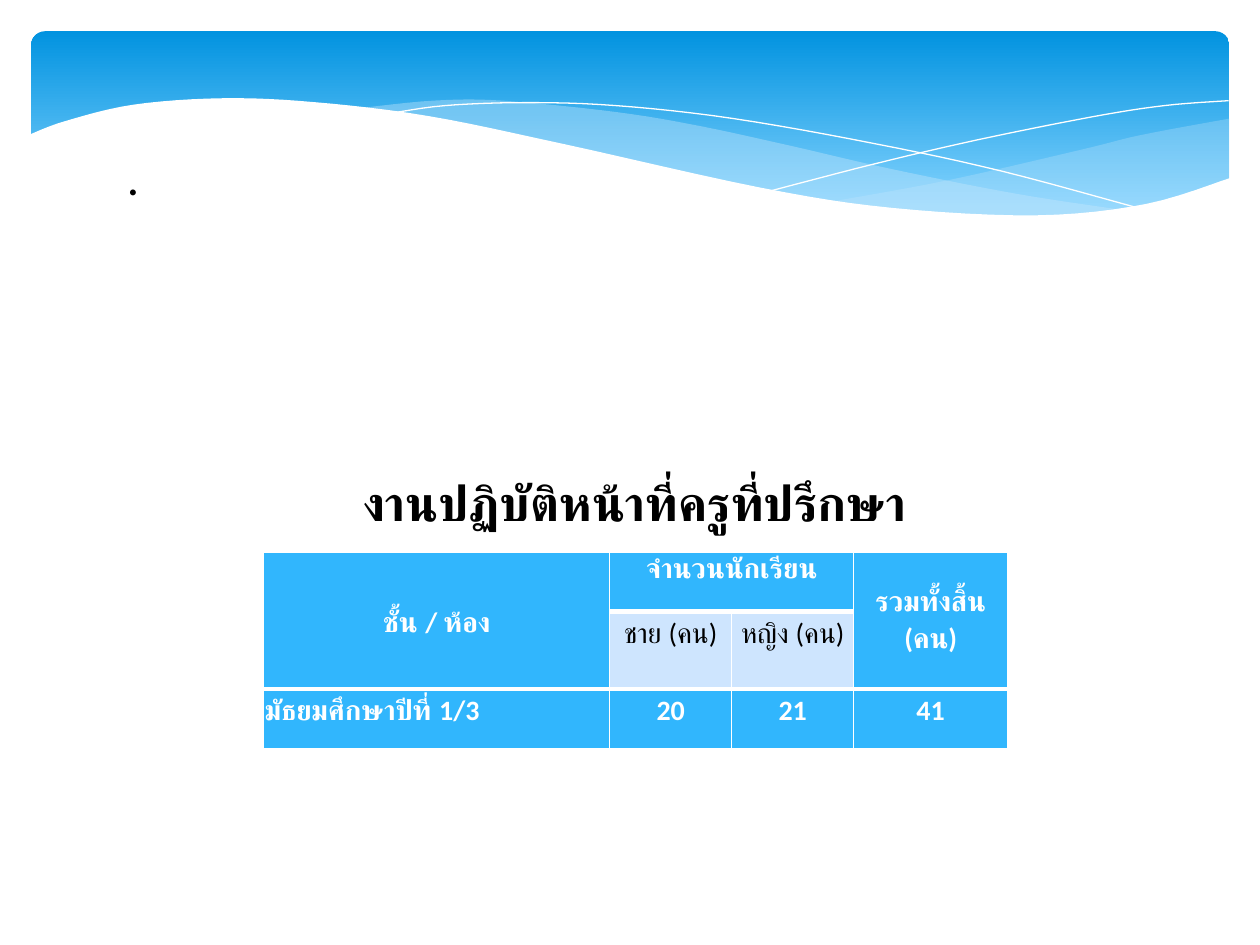
from lxml import etree
from pptx import Presentation
from pptx import util as u
from pptx.dml.color import RGBColor
from pptx.enum import shapes, text
from pptx.oxml.ns import qn

THEME = {
    "font": "Calibri", "title_font": "Arial",
    "white": "FFFFFF", "black": "000000", "veil": "C6E7FC",
    "sky": "0293E0", "sky_light": "83D3FE",
    "cell": "31B6FD", "cell_light": "CEE5FE",
    "title_size": 28, "table_size": 16, "thin": 1, "thick": 3,
}
TITLE = "งานปฏิบัติหน้าที่ครูที่ปรึกษา"
DOT = "."
HEADERS = [
    ["ชั้น / ห้อง", "จำนวนนักเรียน", "", "รวมทั้งสิ้น (คน)"],
    ["", "ชาย (คน)", "หญิง (คน)", ""],
]
CLASSES = [["มัธยมศึกษาปีที่ 1/3", "20", "21", "41"]]
MERGES = [((0, 0), (1, 0)), ((0, 1), (0, 2)), ((0, 3), (1, 3))]
SUBHEADS = [(1, 1), (1, 2)]
COLUMN_WIDTHS = [6.98, 2.46, 2.46, 3.1]
ROW_HEIGHT = 1.2

WAVES = [
    {"fill": "veil", "opacity": 29, "curves": [
        [(24.79, 2.39), (23.01, 2.72), (21.87, 3), (19.13, 3.63), (16.79, 4.06)],
        [(16.79, 4.06), (18.26, 4.24), (20.4, 4.37), (21.92, 4.32), (23.39, 4.06),
         (24.1, 3.86), (24.79, 3.58)]]},
    {"fill": "veil", "opacity": 40, "curves": [
        [(22.68, 4.24), (20.5, 3.91), (17.93, 3.4), (15.98, 2.95), (14.1, 2.54),
         (12.42, 2.26), (10.13, 2.03), (8.74, 2.03), (7.26, 2.18)],
        [(7.26, 2.18), (9.19, 2.46), (11.4, 2.95), (14.38, 3.63), (16.89, 4.09),
         (19, 4.32), (20.5, 4.39), (21.77, 4.34), (22.68, 4.24)]]},
    {"line": "white", "curves": [
        [(7.85, 2.29), (8.97, 2.13), (10.57, 2.07), (12.42, 2.13), (14.78, 2.39),
         (17.65, 2.9), (20.19, 3.45), (23.04, 4.22)]]},
    {"line": "white", "curves": [
        [(15.57, 3.84), (17.65, 3.3), (19.71, 2.82), (22, 2.36), (23.47, 2.13),
         (24.77, 2.03)]]},
    {"fill": "white", "opacity": 100, "curves": [
        [(24.82, 3.58), (23.11, 4.11), (20.9, 4.34), (17.98, 4.19), (15.32, 3.78),
         (11.35, 2.9), (8.64, 2.34), (6.35, 2.06), (4.5, 1.98), (2.69, 2.11),
         (1.32, 2.44), (0.58, 2.72)],
        [(0.58, 5.69), (24.82, 5.69)]]},
]


def color(name):
    return RGBColor.from_string(THEME[name])


def smooth(knots, steps=6):
    ends = [knots[0], *knots, knots[-1]]
    points = [knots[0]]
    for a, b, c, d in zip(ends, ends[1:], ends[2:], ends[3:]):
        for t in (step / steps for step in range(1, steps + 1)):
            points.append(tuple(
                b[i] + t * (c[i] - a[i]) / 2
                + t ** 2 * (2 * a[i] - 5 * b[i] + 4 * c[i] - d[i]) / 2
                + t ** 3 * (3 * b[i] - a[i] - 3 * c[i] + d[i]) / 2
                for i in (0, 1)))
    return points


def add_wave(slide, wave):
    filled = "fill" in wave
    outline = [(u.Cm(x), u.Cm(y)) for curve in wave["curves"] for x, y in smooth(curve)]
    builder = slide.shapes.build_freeform(*outline[0])
    builder.add_line_segments(outline[1:], close=filled)
    band = builder.convert_to_shape()
    band.shadow.inherit = False
    if filled:
        band.fill.solid()
        band.fill.fore_color.rgb = color(wave["fill"])
        tint = band.fill._xPr.find(qn("a:solidFill"))[0]
        etree.SubElement(tint, qn("a:alpha"), val=str(wave["opacity"] * 1000))
        band.line.fill.background()
    else:
        band.fill.background()
        band.line.color.rgb = color(wave["line"])
        band.line.width = u.Pt(0)


def add_banner(slide):
    banner = slide.shapes.add_shape(shapes.MSO_SHAPE.ROUNDED_RECTANGLE,
                                    u.Cm(0.63), u.Cm(0.63), u.Cm(24.15), u.Cm(3.96))
    banner.adjustments[0] = 0.07
    banner.shadow.inherit = False
    banner.line.fill.background()
    banner.fill.gradient()
    banner.fill.gradient_angle = 270
    for stop, (position, name) in zip(banner.fill.gradient_stops,
                                      [(0, "sky"), (0.9, "sky_light")]):
        stop.position = position
        stop.color.rgb = color(name)


def write(frame, words, size="title_size", font="font", ink="black", bold=False,
          align=None, spacing=None):
    frame.word_wrap = True
    line = frame.paragraphs[0]
    line.alignment, line.line_spacing = align, spacing
    run = line.add_run()
    run.text = words
    run.font.size, run.font.name = u.Pt(THEME[size]), THEME[font]
    run.font.color.rgb, run.font.bold = color(ink), bold


def set_border(cell, side, width):
    edge = etree.SubElement(cell._tc.get_or_add_tcPr(), qn(f"a:ln{side}"),
                            w=str(u.Pt(width)))
    paint = etree.SubElement(edge, qn("a:solidFill"))
    etree.SubElement(paint, qn("a:srgbClr"), val=THEME["white"])


def add_class_table(slide):
    rows = HEADERS + CLASSES
    table = slide.shapes.add_table(
        len(rows), len(COLUMN_WIDTHS), u.Cm(5.31), u.Cm(11.13),
        u.Cm(sum(COLUMN_WIDTHS)), u.Cm(ROW_HEIGHT * len(rows))).table
    for column, width in zip(table.columns, COLUMN_WIDTHS):
        column.width = u.Cm(width)
    for start, end in MERGES:
        table.cell(*start).merge(table.cell(*end))
    for r, row in enumerate(rows):
        table.rows[r].height = u.Cm(ROW_HEIGHT)
        for c, words in enumerate(row):
            cell = table.cell(r, c)
            subhead = (r, c) in SUBHEADS
            cell.margin_left = cell.margin_right = u.Cm(0.03)
            cell.margin_top = cell.margin_bottom = 0
            if cell.is_merge_origin and cell.span_height > 1:
                cell.vertical_anchor = text.MSO_ANCHOR.MIDDLE
            above = THEME["thick" if r else "thin"]
            below = THEME["thick" if r < len(rows) - 1 else "thin"]
            for side, width in zip("LRTB", (THEME["thin"], THEME["thin"], above, below)):
                set_border(cell, side, width)
            cell.fill.solid()
            cell.fill.fore_color.rgb = color("cell_light" if subhead else "cell")
            if words:
                left = r >= len(HEADERS) and c == 0
                write(cell.text_frame, words, size="table_size", bold=not subhead,
                      ink="black" if subhead else "white", spacing=1.15,
                      align=text.PP_ALIGN.LEFT if left else text.PP_ALIGN.CENTER)


def main():
    """Build the slide on homeroom teacher duties and class numbers."""
    deck = Presentation()
    deck.slide_width, deck.slide_height = u.Cm(25.4), u.Cm(19.05)
    slide = deck.slides.add_slide(deck.slide_layouts[6])
    add_banner(slide)
    for wave in WAVES:
        add_wave(slide, wave)
    dot = slide.shapes.add_textbox(u.Cm(2.31), u.Cm(2.82), u.Cm(18.6), u.Cm(1.45))
    write(dot.text_frame, DOT)
    add_class_table(slide)
    title = slide.shapes.add_textbox(u.Cm(6.45), u.Cm(9.4), u.Cm(12.7), u.Cm(1.45))
    write(title.text_frame, TITLE, font="title_font", bold=True,
          align=text.PP_ALIGN.CENTER)
    deck.save("out.pptx")


if __name__ == "__main__":
    main()
